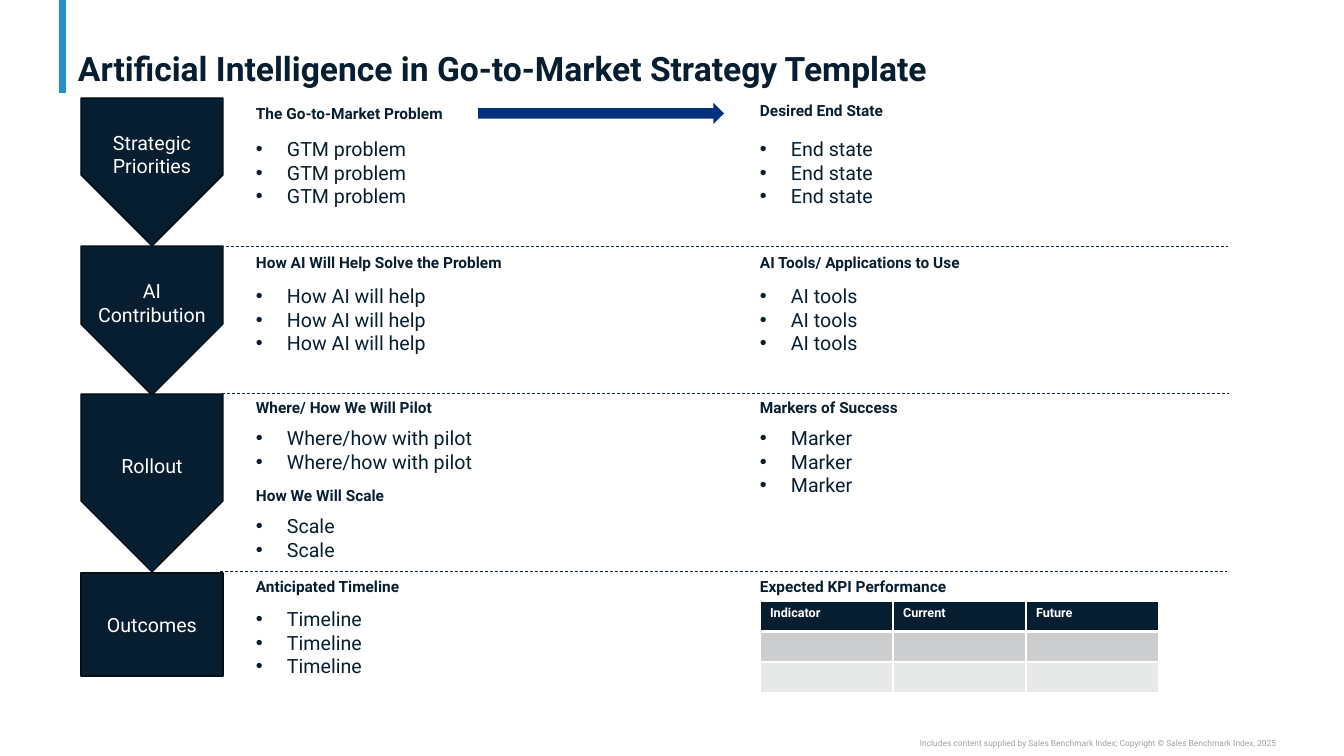
from lxml import etree
from pptx import Presentation
from pptx.dml.color import RGBColor
from pptx.enum.dml import MSO_LINE
from pptx.enum.shapes import MSO_CONNECTOR, MSO_SHAPE
from pptx.enum.text import MSO_ANCHOR, PP_ALIGN
from pptx.oxml.ns import qn
from pptx.util import Pt

PX = 914400 / 100.8
FONT = "Roboto"
NAVY = RGBColor(0x07, 0x1E, 0x31)
OUTLINE = RGBColor(0x03, 0x0D, 0x15)
ACCENT = RGBColor(0x23, 0x91, 0xCF)
ARROW_BLUE = RGBColor(0x03, 0x32, 0x7C)
WHITE = RGBColor(0xFF, 0xFF, 0xFF)
FOOTER_GRAY = RGBColor(0xA0, 0xA0, 0xA0)
ROW_GRAYS = [RGBColor(0xCC, 0xCD, 0xCE), RGBColor(0xE7, 0xE8, 0xE8)]

# Content
TITLE = "Artificial Intelligence in Go-to-Market Strategy Template"
FOOTER = "Includes content supplied by Sales Benchmark Index; Copyright © Sales Benchmark Index, 2025"
LEFT, RIGHT = 246, 750
STAGES = [  # label, top, height
    ("Strategic Priorities", 98, 148),
    ("AI Contribution", 246, 149),
    ("Rollout", 394, 178),
    ("Outcomes", 573, 103),
]
SECTIONS = [  # heading, left, heading top, list top, bullet, count
    ("The Go-to-Market Problem", LEFT, 99, 132, "GTM problem", 3),
    ("Desired End State", RIGHT, 96, 132, "End state", 3),
    ("How AI Will Help Solve the Problem", LEFT, 248, 279, "How AI will help", 3),
    ("AI Tools/ Applications to Use", RIGHT, 248, 279, "AI tools", 3),
    ("Where/ How We Will Pilot", LEFT, 393, 421, "Where/how with pilot", 2),
    ("Markers of Success", RIGHT, 393, 421, "Marker", 3),
    ("How We Will Scale", LEFT, 481, 509, "Scale", 2),
    ("Anticipated Timeline", LEFT, 572, 602, "Timeline", 3),
    ("Expected KPI Performance", RIGHT, 572, 0, "", 0),
]
DIVIDERS = [(221, 246), (222, 393), (220, 571)]  # left, y
KPI_HEADERS = ["Indicator", "Current", "Future"]
STAGE_LEFT, STAGE_WIDTH, DIVIDER_WIDTH = 81, 142, 1007
INDENT = 31


def px(*lengths):
    return [round(length * PX) for length in lengths]


def style(paragraph, size, color, bold=False):
    font = paragraph.font
    font.name, font.size, font.bold = FONT, Pt(size), bold
    font.color.rgb = color


def add_text(box, lines, size, color, bold=False, bullet=False):
    shape = slide.shapes.add_textbox(*px(*box))
    frame = shape.text_frame
    frame.word_wrap = True
    frame.text = "\n".join(lines)
    for paragraph in frame.paragraphs:
        if bullet:
            properties = paragraph._p.get_or_add_pPr()
            properties.set("marL", str(px(INDENT)[0]))
            properties.set("indent", str(px(-INDENT)[0]))
            etree.SubElement(properties, qn("a:buFont")).set("typeface", "Arial")
            etree.SubElement(properties, qn("a:buChar")).set("char", "•")
        style(paragraph, size, color, bold)
    return frame


def add_line(x1, y1, x2, y2, color, width):
    line = slide.shapes.add_connector(MSO_CONNECTOR.STRAIGHT, *px(x1, y1, x2, y2))
    line.line.color.rgb = color
    line.line.width = Pt(width)
    etree.SubElement(line._element.spPr, qn("a:effectLst"))
    return line


def add_filled(kind, box, color):
    shape = slide.shapes.add_shape(kind, *px(*box))
    shape.shadow.inherit = False
    shape.fill.solid()
    shape.fill.fore_color.rgb = color
    return shape


def add_border(cell, side, width):
    border = etree.SubElement(cell._tc.get_or_add_tcPr(), qn("a:ln" + side))
    border.set("w", str(Pt(width)))
    fill = etree.SubElement(border, qn("a:solidFill"))
    etree.SubElement(fill, qn("a:srgbClr")).set("val", str(WHITE))


presentation = Presentation()
presentation.slide_width, presentation.slide_height = px(1344, 756)
slide = presentation.slides.add_slide(presentation.slide_layouts[6])

# Accent bar, footer and title
add_line(63, 0, 63, 93, ACCENT, 5)
footer = add_text((756, 738, 520, 10), [FOOTER], 6, FOOTER_GRAY)
footer.margin_left = footer.margin_right = footer.margin_top = footer.margin_bottom = 0
footer.paragraphs[0].alignment = PP_ALIGN.RIGHT
title = add_text((68, 4, 1209, 85), [TITLE], 24, NAVY, bold=True)
title.margin_top = title.margin_bottom = 0
title.vertical_anchor = MSO_ANCHOR.BOTTOM
title.paragraphs[0].line_spacing = 0.9

# Stages: pentagons turned to point down, ending in a plain rectangle
for label, top, height in STAGES:
    is_last = label == STAGES[-1][0]
    if is_last:
        stage = add_filled(MSO_SHAPE.RECTANGLE, (STAGE_LEFT, top, STAGE_WIDTH, height), NAVY)
    else:
        shift = (height - STAGE_WIDTH) / 2
        box = (STAGE_LEFT - shift, top + shift, height, STAGE_WIDTH)
        stage = add_filled(MSO_SHAPE.PENTAGON, box, NAVY)
        stage.rotation = 90
        stage.text_frame._txBody.bodyPr.set("vert", "vert270")
    stage.line.color.rgb = OUTLINE
    stage.line.width = Pt(1)
    frame = stage.text_frame
    frame.word_wrap = True
    frame.vertical_anchor = MSO_ANCHOR.MIDDLE
    frame.text = label
    frame.paragraphs[0].alignment = PP_ALIGN.CENTER
    style(frame.paragraphs[0], 14, WHITE)

# Arrow and dividers
arrow = add_filled(MSO_SHAPE.RIGHT_ARROW, (478, 103, 246, 21), ARROW_BLUE)
arrow.line.fill.background()
for left, y in DIVIDERS:
    divider = add_line(left, y, left + DIVIDER_WIDTH, y, NAVY, 0.5)
    divider.line.dash_style = MSO_LINE.DASH

# Headings and bullet lists
for heading, left, heading_top, list_top, item, count in SECTIONS:
    add_text((left, heading_top, 396, 29), [heading], 11, NAVY, bold=True)
    if count:
        add_text((left, list_top, 281, 10 + 24 * count), [item] * count, 14, NAVY, bullet=True)

# KPI table
rows, columns = 1 + len(ROW_GRAYS), len(KPI_HEADERS)
table = slide.shapes.add_table(rows, columns, *px(760, 601, 133 * columns, 30.5 * rows)).table
for row, color in enumerate([NAVY] + ROW_GRAYS):
    for column, header in enumerate(KPI_HEADERS):
        cell = table.cell(row, column)
        for side in "LRTB":
            under_header = (row, side) in [(0, "B"), (1, "T")]
            add_border(cell, side, 3 if under_header else 1)
        cell.fill.solid()
        cell.fill.fore_color.rgb = color
        if row == 0:
            cell.text = header
        style(cell.text_frame.paragraphs[0], 9, WHITE, bold=True)

presentation.save("out.pptx")
